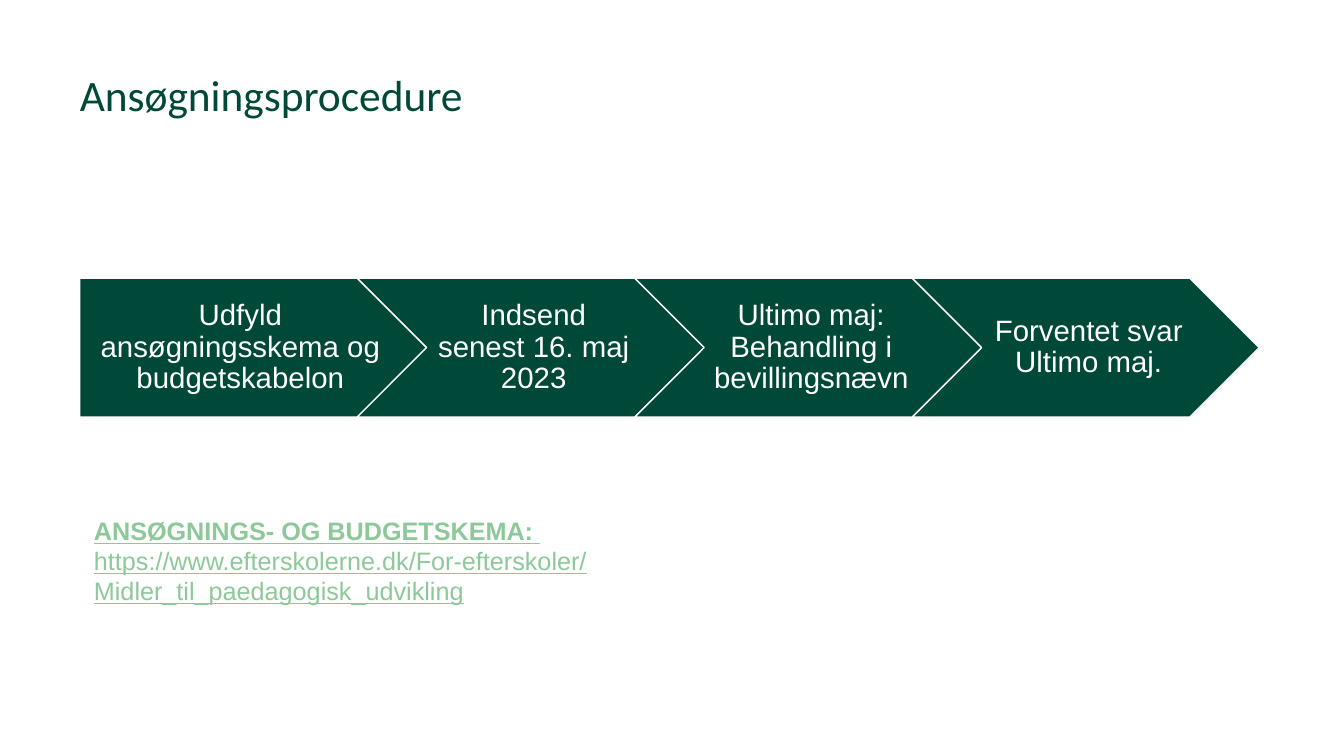
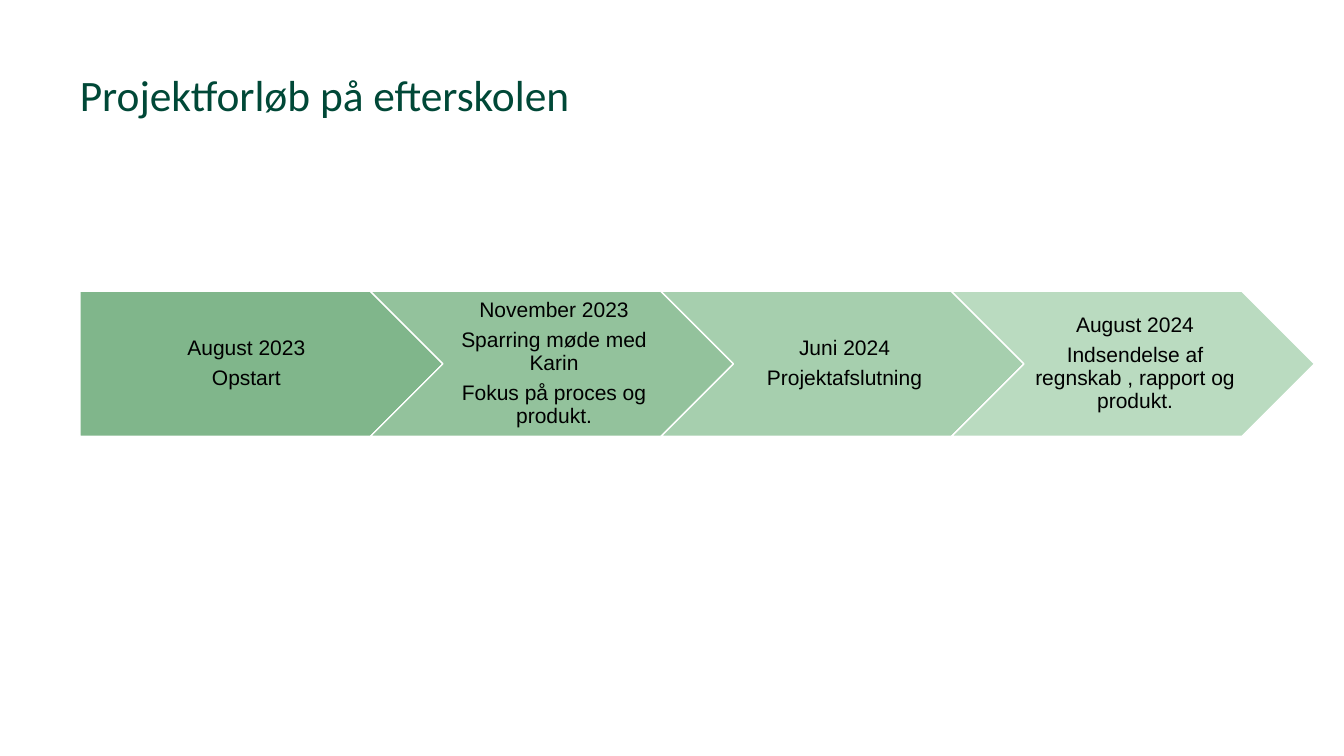
from pptx import Presentation
from pptx.dml.color import RGBColor
from pptx.enum.shapes import MSO_SHAPE as Shape
from pptx.enum.text import MSO_ANCHOR as Anchor, MSO_AUTO_SIZE as AutoSize, PP_ALIGN as Align
from pptx.util import Pt

COLORS = {
    "green": "004837", "link": "8DC899", "white": "FFFFFF", "black": "000000",
    "step1": "80B68B", "step2": "93C29C", "step3": "A6CFAE", "step4": "BADBC0",
}
LEFT = 57
TITLE_FORMAT = {"name": "Calibri", "size": Pt(31), "bold": False}

SLIDES = [
    {
        "title": "Ansøgningsprocedure",
        "steps": [
            ("green", ["Udfyld ansøgningsskema og budgetskabelon"]),
            ("green", ["Indsend senest 16. maj 2023"]),
            ("green", ["Ultimo maj: Behandling i bevillingsnævn"]),
            ("green", ["Forventet svar Ultimo maj."]),
        ],
        "chain": {"top": 198.7, "step_width": 247.8, "size": 21, "color": "white",
                  "first_margins": (8.4, 4.2, 2.1, 4.2), "margins": (6.3, 4.2, 2.1, 4.2)},
        "link": [
            ("ANSØGNINGS- OG BUDGETSKEMA: ", True),
            ("https://www.efterskolerne.dk/For-efterskoler/Midler_til_paedagogisk_udvikling", False),
        ],
    },
    {
        "title": "Projektforløb på efterskolen",
        "steps": [
            ("step1", ["August 2023", "Opstart"]),
            ("step2", ["November 2023", "Sparring møde med Karin", "Fokus på proces og produkt."]),
            ("step3", ["Juni 2024", "Projektafslutning"]),
            ("step4", ["August 2024", "Indsendelse af regnskab , rapport og produkt."]),
        ],
        "chain": {"top": 208, "step_width": 259.4, "size": 15, "color": "black",
                  "first_margins": (6, 3, 1.5, 3), "margins": (4.5, 3, 1.5, 3)},
    },
]


def rgb(name):
    return RGBColor.from_string(COLORS[name])


def set_values(target, values):
    for name, value in values.items():
        setattr(target, name, value)


def set_font(font, color, values):
    set_values(font, values)
    font.color.rgb = rgb(color)


def set_margins(frame, margins):
    """Set left, top, right and bottom insets in points."""
    for side, margin in zip(("left", "top", "right", "bottom"), margins):
        setattr(frame, f"margin_{side}", Pt(margin))


def add_paragraphs(frame, texts):
    """Yield one paragraph with one run for each text."""
    for index, text in enumerate(texts):
        paragraph = frame.add_paragraph() if index else frame.paragraphs[0]
        paragraph.add_run().text = text
        yield paragraph


def format_title(title, text):
    set_values(title, {"left": Pt(LEFT), "top": Pt(54.8), "width": Pt(672), "height": Pt(67.5)})
    frame = title.text_frame
    set_values(frame, {"vertical_anchor": Anchor.TOP, "word_wrap": True, "auto_size": AutoSize.NONE})
    set_margins(frame, (0, 0, 0, 0))
    for paragraph in add_paragraphs(frame, [text]):
        set_values(paragraph, {"alignment": Align.LEFT, "line_spacing": 0.83})
        set_font(paragraph.runs[0].font, "green", TITLE_FORMAT)


def add_chain(slide, steps, chain):
    """Draw interlocking arrows; each overlaps the next by a fifth of its width."""
    width, size = chain["step_width"], chain["size"]
    for index, (fill, texts) in enumerate(steps):
        arrow = slide.shapes.add_shape(
            Shape.CHEVRON if index else Shape.PENTAGON,
            Pt(LEFT + index * width * 0.8), Pt(chain["top"]), Pt(width), Pt(width * 0.4))
        arrow.shadow.inherit = False
        arrow.fill.solid()
        arrow.fill.fore_color.rgb = rgb(fill)
        arrow.line.color.rgb = rgb("white")
        arrow.line.width = Pt(1)
        frame = arrow.text_frame
        set_values(frame, {"word_wrap": True, "vertical_anchor": Anchor.MIDDLE})
        set_margins(frame, chain["margins" if index else "first_margins"])
        for paragraph in add_paragraphs(frame, texts):
            set_values(paragraph, {"alignment": Align.CENTER, "line_spacing": 0.9,
                                   "space_after": Pt(size * 0.35)})
            set_font(paragraph.runs[0].font, chain["color"], {"name": "Arial", "size": Pt(size)})


def add_link(slide, lines):
    frame = slide.shapes.add_textbox(Pt(60), Pt(364.5), Pt(480), Pt(94)).text_frame
    frame.word_wrap = True
    paragraphs = add_paragraphs(frame, [text for text, _ in lines])
    for paragraph, (_, bold) in zip(paragraphs, lines):
        set_font(paragraph.runs[0].font, "link",
                 {"name": "Arial", "size": Pt(18), "bold": bold, "underline": True})


def main():
    presentation = Presentation()
    set_values(presentation, {"slide_width": Pt(960), "slide_height": Pt(540)})
    for content in SLIDES:
        slide = presentation.slides.add_slide(presentation.slide_layouts[5])
        format_title(slide.shapes.title, content["title"])
        add_chain(slide, content["steps"], content["chain"])
        if "link" in content:
            add_link(slide, content["link"])
    presentation.save("out.pptx")


if __name__ == "__main__":
    main()
